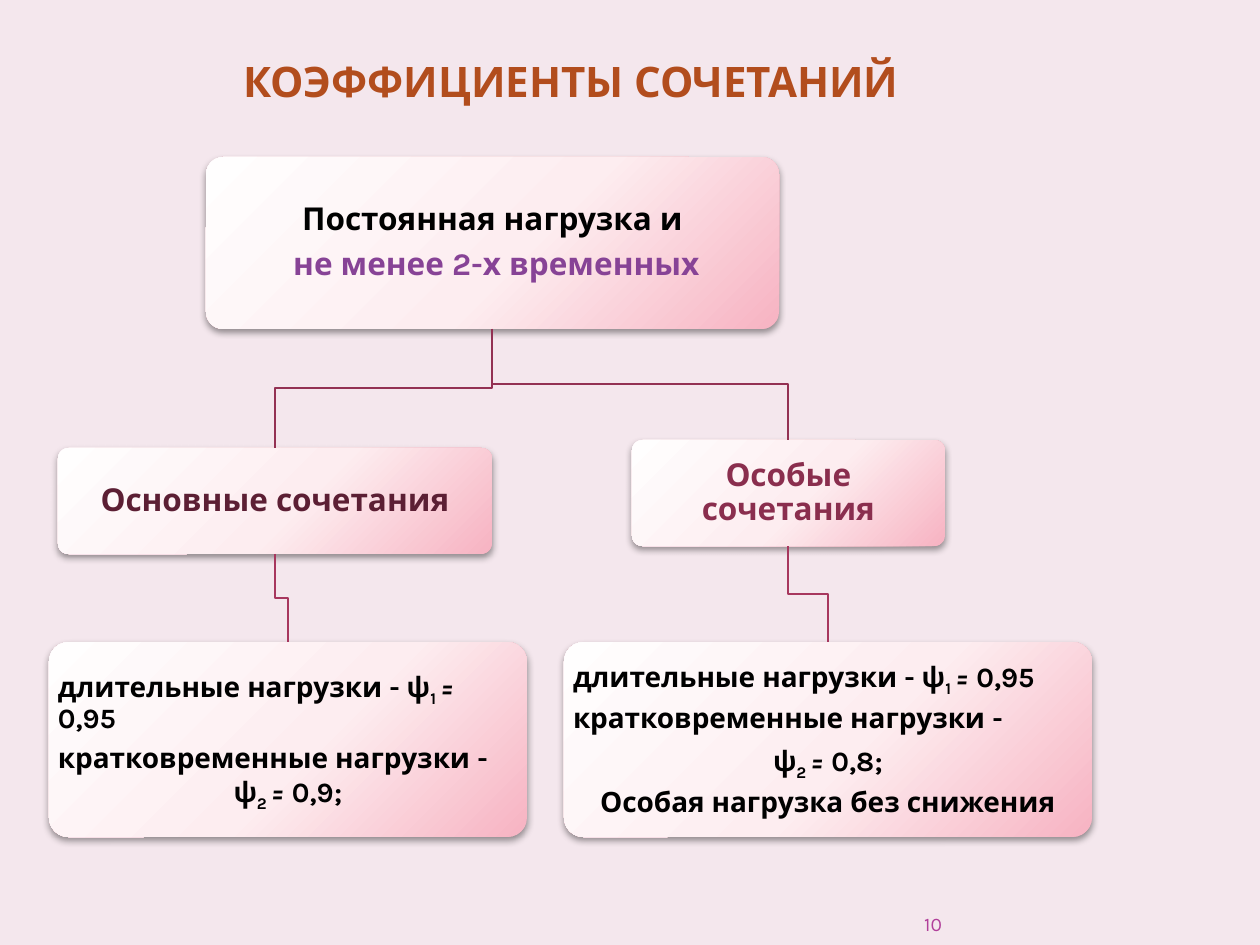
from lxml import etree
from pptx import Presentation
from pptx.dml.color import RGBColor
from pptx.enum.shapes import MSO_SHAPE
from pptx.enum.text import MSO_ANCHOR, MSO_AUTO_SIZE, PP_ALIGN
from pptx.oxml import parse_xml
from pptx.oxml.ns import nsdecls, qn
from pptx.util import Pt

PX = 914400 / 126
LEFT, CENTER, RIGHT = PP_ALIGN.LEFT, PP_ALIGN.CENTER, PP_ALIGN.RIGHT
TOP, MIDDLE, BOTTOM = MSO_ANCHOR.TOP, MSO_ANCHOR.MIDDLE, MSO_ANCHOR.BOTTOM
ROUNDED = MSO_SHAPE.ROUNDED_RECTANGLE
NO_AUTOFIT = MSO_AUTO_SIZE.NONE
COLORS = {
    "page": "F4E7ED", "title": "B24D1D", "number": "B13F9A", "text": "000000",
    "violet": "874396", "main": "5C1F34", "special": "8A2E4E",
    "upper link": "933153", "lower link": "A7375E",
}
GRADIENT = f"""<a:gradFill {nsdecls('a')} rotWithShape="1"><a:gsLst>
<a:gs pos="0"><a:srgbClr val="FFFEFE"/></a:gs>
<a:gs pos="55000"><a:srgbClr val="FDEDF0"/></a:gs>
<a:gs pos="100000"><a:srgbClr val="F7B3C2"/></a:gs></a:gsLst>
<a:path path="circle"><a:fillToRect l="-40000" t="-90000" r="140000" b="190000"/></a:path>
</a:gradFill>"""
SHADOW = f"""<a:outerShdw {nsdecls('a')} blurRad="52000" dist="25400" dir="5400000"
rotWithShape="0"><a:srgbClr val="000000"><a:alpha val="40000"/></a:srgbClr></a:outerShdw>"""


def px(*lengths):
    return [round(length * PX) for length in lengths]


def write(shape, paragraphs, size=18, color="text", bold=True, anchor=MIDDLE,
          insets=(0, 0), line_spacing=None):
    """Each paragraph is (alignment, percent of space after, spans);
    a span is a string or (string, format), format being sub, italic or a colour."""
    frame = shape.text_frame
    frame.word_wrap = True
    frame.auto_size = NO_AUTOFIT
    frame.vertical_anchor = anchor
    frame.margin_left = frame.margin_right = px(insets[0])[0]
    frame.margin_top = frame.margin_bottom = px(insets[1])[0]
    for index, (alignment, after, spans) in enumerate(paragraphs):
        para = frame.paragraphs[0] if index == 0 else frame.add_paragraph()
        para.alignment = alignment
        if line_spacing:
            para.line_spacing = line_spacing
        if after:
            space = etree.SubElement(para._p.get_or_add_pPr(), qn("a:spcAft"))
            etree.SubElement(space, qn("a:spcPct")).set("val", str(after * 1000))
        for item in spans:
            words, style = (item, None) if isinstance(item, str) else item
            span = para.add_run()
            span.text = words
            span.font.name = "Karla"
            span.font.size = Pt(size)
            span.font.bold = bold
            span.font.italic = style == "italic"
            span.font.color.rgb = RGBColor.from_string(COLORS.get(style, COLORS[color]))
            if style == "sub":
                span.font._element.set("baseline", "-25000")


deck = Presentation()
deck.slide_width, deck.slide_height = px(1260, 945)
page = deck.slides.add_slide(deck.slide_layouts[5])
page.background.fill.solid()
page.background.fill.fore_color.rgb = RGBColor.from_string(COLORS["page"])

# Title and page number
title = page.shapes.title
title.left, title.top, title.width, title.height = px(59, 49, 1024, 63)
write(title, [(CENTER, 0, ["КОЭФФИЦИЕНТЫ СОЧЕТАНИЙ"])], size=24, color="title",
      anchor=TOP, insets=(13, 6))
number = page.shapes.add_textbox(*px(862, 903, 80, 32))
write(number, [(RIGHT, 0, ["10"])], size=11, color="number", bold=False, anchor=BOTTOM)

# Boxes of the tree: place, text size, text colour, paragraphs
equals = ("=", "italic")
long_loads = (LEFT, 35, ["длительные нагрузки - ψ", ("1 ", "sub"), equals, " 0,95"])
short_loads = "кратковременные нагрузки -"
boxes = {
    "loads": ((206, 157, 573, 172), 18, "text", [
        (CENTER, 35, ["Постоянная нагрузка и"]),
        (CENTER, 35, [(" не менее 2-х временных", "violet")])]),
    "main": ((58, 448, 434, 106), 18, "main", [(CENTER, 35, ["Основные сочетания"])]),
    "special": ((632, 440, 313, 106), 18, "special", [(CENTER, 35, ["Особые сочетания"])]),
    "main factors": ((49, 642, 478, 195), 16, "text", [
        long_loads,
        (LEFT, 0, [short_loads]),
        (CENTER, 0, ["ψ", ("2 ", "sub"), equals, " 0,9;"])]),
    "special factors": ((564, 642, 528, 195), 16, "text", [
        long_loads,
        (LEFT, 35, [short_loads]),
        (CENTER, 35, ["ψ", ("2 ", "sub"), equals, " 0,8;"]),
        (CENTER, 35, ["Особая нагрузка без снижения"])]),
}
for place, size, color, paragraphs in boxes.values():
    box = page.shapes.add_shape(ROUNDED, *px(*place))
    box.adjustments[0] = 0.1
    box.line.fill.background()
    box.shadow.inherit = False
    properties = box._element.spPr
    properties.find(qn("a:prstGeom")).addnext(parse_xml(GRADIENT))
    properties.find(qn("a:effectLst")).append(parse_xml(SHADOW))
    # The rounded corners already push the text in by 2.9 % of the height
    inset = 9 - 0.029 * place[3]
    write(box, paragraphs, size=size, color=color, insets=(inset, inset), line_spacing=0.9)

# Elbow links from the bottom of one box to the top of the next
links = [
    ("loads", "main", "upper link"), ("loads", "special", "upper link"),
    ("main", "main factors", "lower link"), ("special", "special factors", "lower link"),
]
for parent, child, color in links:
    left, top, width, height = boxes[parent][0]
    start_x, start_y = left + width / 2, top + height
    left, end_y, width, height = boxes[child][0]
    end_x, middle_y = left + width / 2, (start_y + end_y) / 2
    path = page.shapes.build_freeform(start_x, start_y, scale=PX)
    path.add_line_segments([(start_x, middle_y), (end_x, middle_y), (end_x, end_y)],
                           close=False)
    link = path.convert_to_shape()
    link.fill.background()
    link.line.color.rgb = RGBColor.from_string(COLORS[color])
    link.line.width = Pt(1.5)
    link.shadow.inherit = False

deck.save("out.pptx")
